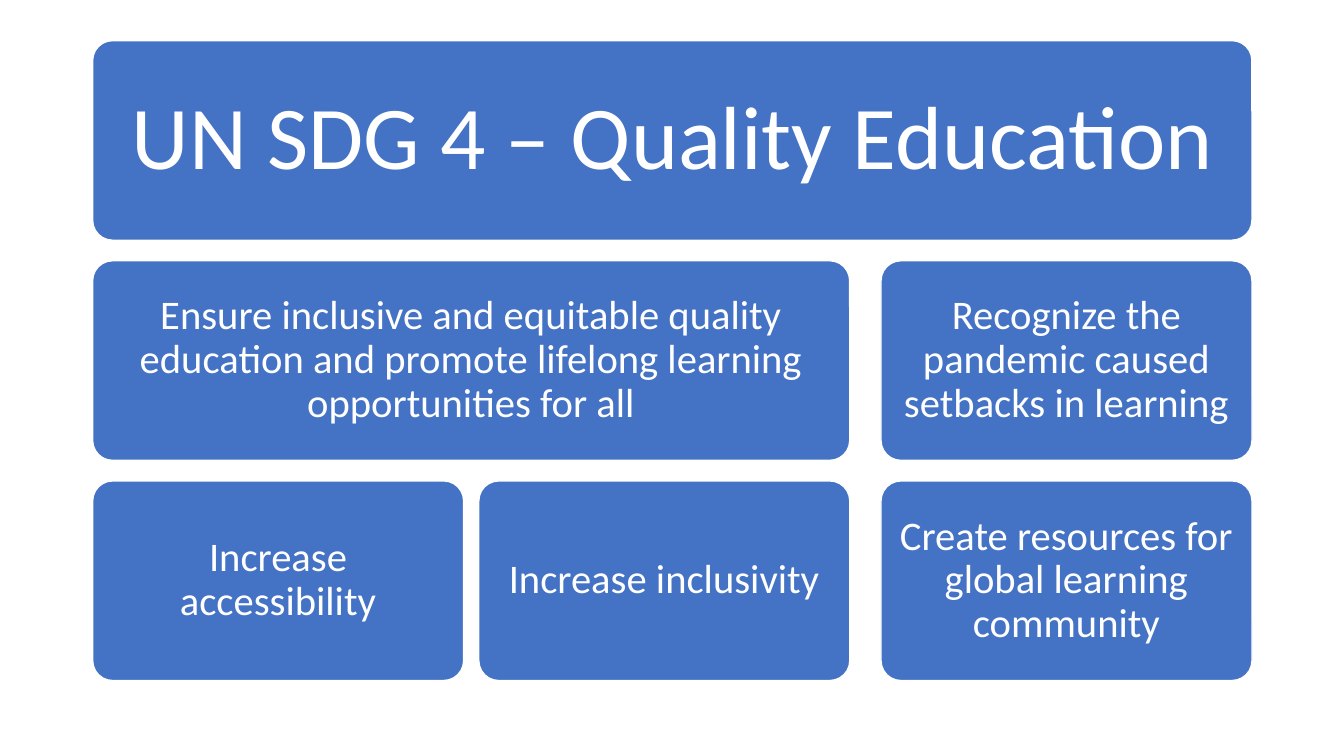
from pptx import Presentation
from pptx.dml.color import RGBColor
from pptx.enum.shapes import MSO_SHAPE
from pptx.enum.text import MSO_ANCHOR, MSO_AUTO_SIZE, PP_ALIGN
from pptx.util import Pt

ROUNDED = MSO_SHAPE.ROUNDED_RECTANGLE
MIDDLE = MSO_ANCHOR.MIDDLE
CENTER = PP_ALIGN.CENTER
NO_AUTOFIT = MSO_AUTO_SIZE.NONE
TITLE_ONLY = 5

# Grid, in points
COLUMNS = (66.2, 342, 629.3)
CARD_WIDTH = 265
CARD_HEIGHT = 142.6
TOP = 29
ROW_PITCH = 157.25

# Text, row, first column, last column
CARDS = (
    ("Ensure inclusive and equitable quality education and promote "
     "lifelong learning opportunities for all", 1, 0, 1),
    ("Increase accessibility", 2, 0, 0),
    ("Increase inclusivity", 2, 1, 1),
    ("Recognize the pandemic caused setbacks in learning", 1, 2, 2),
    ("Create resources for global learning community", 2, 2, 2),
)


def color(hex_string):
    return RGBColor.from_string(hex_string)


def cell(row, first, last):
    """Left, top, width and height of a card spanning columns."""
    left = COLUMNS[first]
    width = COLUMNS[last] + CARD_WIDTH - left
    return left, TOP + row * ROW_PITCH, width, CARD_HEIGHT


class SlideBuilder:
    font = "Calibri"
    fill = "4472C4"
    ink = "FFFFFF"

    def __init__(self, slide):
        self.slide = slide

    def add_text(self, shape, text, size, margin):
        frame = shape.text_frame
        frame.word_wrap = True
        frame.auto_size = NO_AUTOFIT
        frame.vertical_anchor = MIDDLE
        frame.margin_left = frame.margin_right = Pt(margin)
        frame.margin_top = frame.margin_bottom = Pt(margin)
        paragraph = frame.paragraphs[0]
        paragraph.alignment = CENTER
        paragraph.line_spacing = 0.9
        run = paragraph.add_run()
        run.text = text
        run.font.name = self.font
        run.font.size = Pt(size)
        run.font.color.rgb = color(self.ink)

    def card(self, box):
        shape = self.slide.shapes.add_shape(ROUNDED, *map(Pt, box))
        shape.adjustments[0] = 0.1
        shape.shadow.inherit = False
        shape.fill.solid()
        shape.fill.fore_color.rgb = color(self.fill)
        shape.line.color.rgb = color(self.ink)
        shape.line.width = Pt(1)
        return shape

    def text_card(self, text, box):
        self.add_text(self.card(box), text, size=29, margin=8.7)

    def title(self, text, box):
        banner = self.card(box)
        title = self.slide.shapes.title
        title.left, title.top, title.width, title.height = map(Pt, box)
        self.add_text(title, text, size=64, margin=23.5)
        # Bring the title in front of its banner
        banner.element.addnext(title.element)


def main():
    presentation = Presentation()
    presentation.slide_width = Pt(960)
    presentation.slide_height = Pt(540)
    layout = presentation.slide_layouts[TITLE_ONLY]
    builder = SlideBuilder(presentation.slides.add_slide(layout))

    # Title banner across all columns
    builder.title("UN SDG 4 – Quality Education", cell(0, 0, 2))

    # Goals and actions
    for text, row, first, last in CARDS:
        builder.text_card(text, cell(row, first, last))

    presentation.save("out.pptx")


if __name__ == "__main__":
    main()
